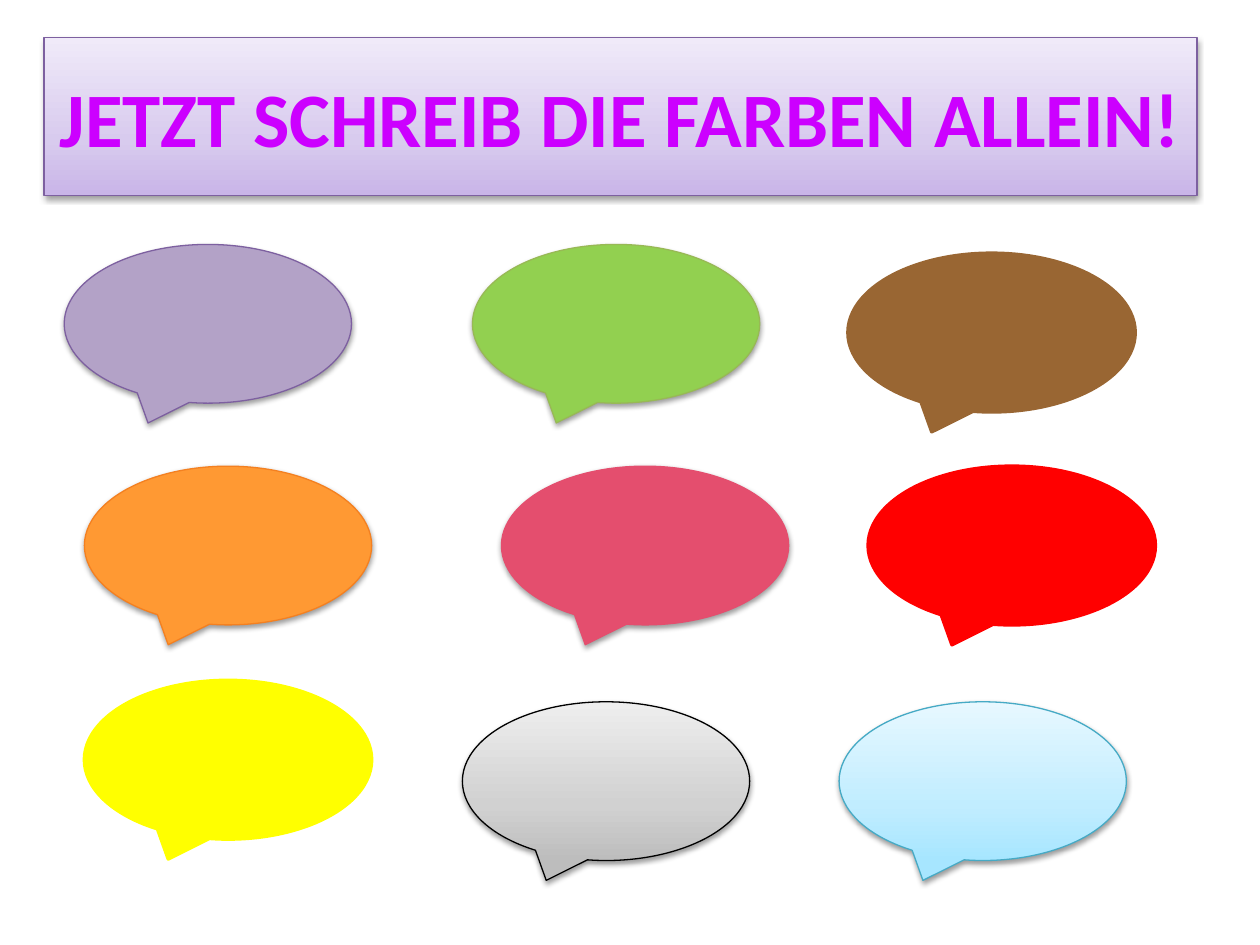
from dataclasses import dataclass

from lxml.etree import SubElement
from pptx import Presentation
from pptx.dml.color import RGBColor
from pptx.enum.shapes import MSO_SHAPE
from pptx.enum.text import MSO_ANCHOR, PP_ALIGN
from pptx.oxml.ns import qn
from pptx.util import Inches, Pt


@dataclass(frozen=True)
class Theme:
    font: str = "Calibri"
    title_size: int = 44
    title_color: str = "CC00FF"
    thin: float = 0.75
    thick: float = 2
    title_line: str = "7D60A0"
    # Gradients run from bottom to top
    lilac: tuple = ("C9B5E8", "D8CBEE", "F0EAF9")
    gray: tuple = ("BDBDBD", "D1D1D1", "EEEEEE")
    sky: tuple = ("A7E6FF", "C1EDFF", "E7F8FF")


THEME = Theme()
GRADIENT_POSITIONS = (0, 35, 100)
BUBBLE_SIZE = (2.28, 1.26)

# Left, top, fill, line colour, raised (thin line and shadow) or flat (thick line)
BUBBLES = [
    (0.51, 1.94, "B3A2C7", "7D60A0", True),
    (3.75, 1.94, "92D050", "98B955", True),
    (6.73, 2.01, "996633", "996633", False),
    (0.67, 3.7, "FF9933", "F48020", True),
    (3.98, 3.7, "E44E6E", "E44E6E", True),
    (6.89, 3.7, "FF0000", "FF0000", False),
    (0.67, 5.4, "FFFF00", "FFFF00", False),
    (3.67, 5.57, THEME.gray, "000000", True),
    (6.66, 5.57, THEME.sky, "46AAC5", True),
]


def fill_gradient(shape, colors):
    shape.fill.gradient()
    shape.fill.gradient_angle = 90
    stops = shape._element.spPr.find(".//" + qn("a:gsLst"))
    for stop in list(stops):
        stops.remove(stop)
    for position, color in zip(GRADIENT_POSITIONS, colors):
        stop = SubElement(stops, qn("a:gs"), pos=str(position * 1000))
        SubElement(stop, qn("a:srgbClr"), val=color)


def add_shadow(shape):
    effects = shape._element.spPr.find(qn("a:effectLst"))
    shadow = SubElement(effects, qn("a:outerShdw"), blurRad=str(Pt(3.1)),
                        dist=str(Pt(1.6)), dir="5400000", rotWithShape="0")
    color = SubElement(shadow, qn("a:srgbClr"), val="000000")
    SubElement(color, qn("a:alpha"), val="38000")


def add_styled_shape(slide, kind, box, fill, line, raised=True):
    shape = slide.shapes.add_shape(kind, *(Inches(length) for length in box))
    shape.shadow.inherit = False
    if isinstance(fill, tuple):
        fill_gradient(shape, fill)
    else:
        shape.fill.solid()
        shape.fill.fore_color.rgb = RGBColor.from_string(fill)
    shape.line.color.rgb = RGBColor.from_string(line)
    shape.line.width = Pt(THEME.thin if raised else THEME.thick)
    if raised:
        add_shadow(shape)
    return shape


def write_text(shape, text, *, size, color, bold=False, align=PP_ALIGN.CENTER):
    frame = shape.text_frame
    frame.word_wrap = True
    frame.vertical_anchor = MSO_ANCHOR.MIDDLE
    paragraph = frame.paragraphs[0]
    paragraph.alignment = align
    run = paragraph.add_run()
    run.text = text
    run.font.name = THEME.font
    run.font.size = Pt(size)
    run.font.bold = bold
    run.font.color.rgb = RGBColor.from_string(color)


def add_title(slide, box):
    banner = add_styled_shape(slide, MSO_SHAPE.RECTANGLE, box,
                              THEME.lilac, THEME.title_line)
    write_text(banner, "JETZT SCHREIB DIE FARBEN ALLEIN!",
               size=THEME.title_size, color=THEME.title_color, bold=True)


def add_bubble(slide, box, fill, line, raised):
    add_styled_shape(slide, MSO_SHAPE.OVAL_CALLOUT, box, fill, line, raised)


def main():
    presentation = Presentation()
    presentation.slide_width = Inches(10)
    presentation.slide_height = Inches(7.5)
    slide = presentation.slides.add_slide(presentation.slide_layouts[6])

    # Title banner
    add_title(slide, (0.35, 0.3, 9.15, 1.25))

    # Colour bubbles
    for left, top, fill, line, raised in BUBBLES:
        add_bubble(slide, (left, top, *BUBBLE_SIZE), fill, line, raised)

    presentation.save("out.pptx")


if __name__ == "__main__":
    main()
